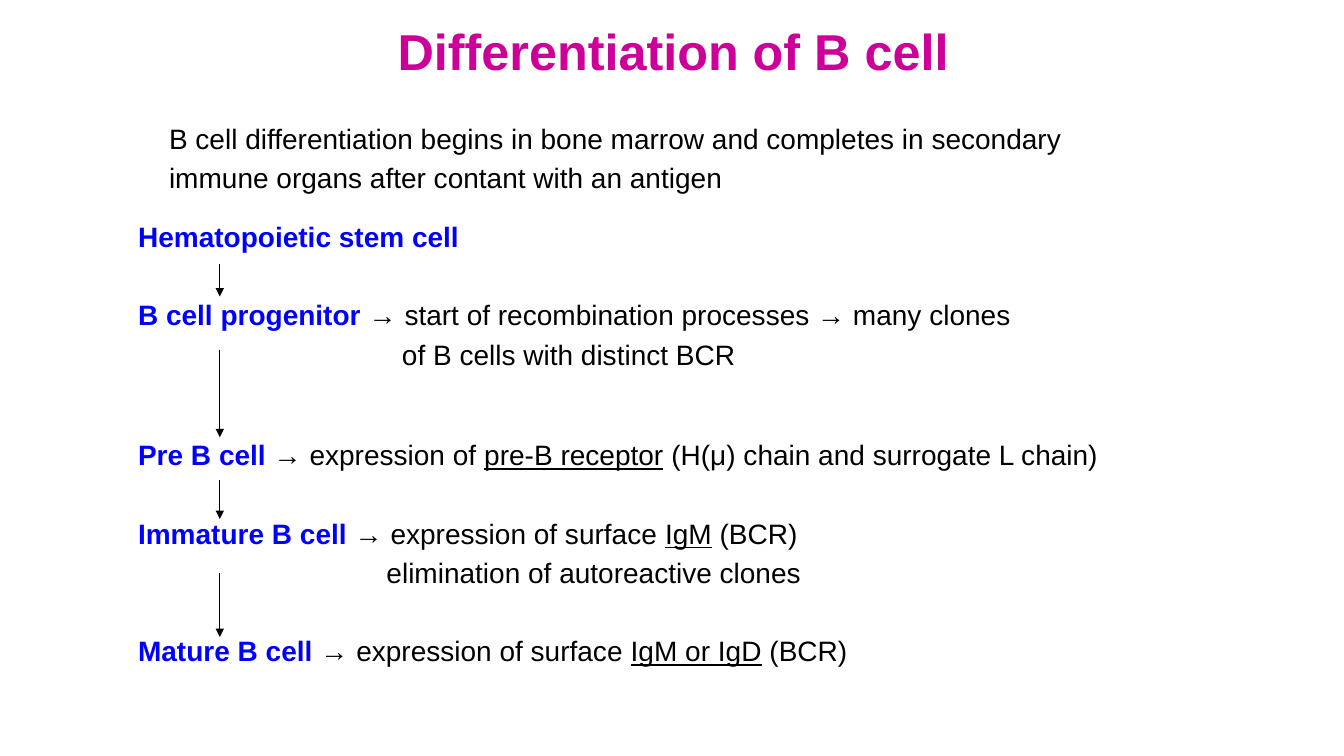
from pptx import Presentation
from pptx.dml.color import RGBColor
from pptx.enum.shapes import MSO_CONNECTOR
from pptx.enum.text import MSO_ANCHOR, MSO_AUTO_SIZE, PP_ALIGN
from pptx.oxml.ns import qn
from pptx.util import Cm, Pt
from lxml.etree import SubElement

FONT = "Arial"
BLACK, BLUE, MAGENTA = "000000", "0000FF", "CC0099"
LINE_GAP, INTRO_GAP, STAGE_GAP, LONG_GAP = 4, 18, 32, 48

# Each line: space before (pt), left indent (cm), stage name, then (text, underlined) parts
LINES = [
    (0, 0.78, "", [("B cell differentiation begins in bone marrow and completes in secondary", False)]),
    (LINE_GAP, 0.78, "", [("immune organs after contant with an antigen", False)]),
    (INTRO_GAP, 0, "Hematopoietic stem cell", []),
    (STAGE_GAP, 0, "B cell progenitor ",
     [("→ start of recombination processes → many clones", False)]),
    (LINE_GAP, 6.65, "", [("of B cells with distinct BCR", False)]),
    (LONG_GAP, 0, "Pre B cell ",
     [("→ expression of ", False), ("pre-B receptor", True),
      (" (H(μ) chain and surrogate L chain)", False)]),
    (STAGE_GAP, 0, "Immature B cell ",
     [("→ expression of surface ", False), ("IgM", True), (" (BCR)", False)]),
    (LINE_GAP, 6.26, "", [("elimination of autoreactive clones", False)]),
    (STAGE_GAP, 0, "Mature B cell ",
     [("→ expression of surface ", False), ("IgM or IgD", True), (" (BCR)", False)]),
]

# Start and end of each arrow, in cm below the top of the body
ARROW_X = 2.31
ARROW_SPANS = [(3.73, 4.55), (5.89, 8.1), (9.17, 10.16), (11.53, 13.13)]


def rgb(color):
    return RGBColor.from_string(color)


def set_font(font, size, color, bold=False):
    font.name, font.size, font.bold = FONT, Pt(size), bold
    font.color.rgb = rgb(color)


def add_title(slide, text, left, top, width, height):
    sp = slide.shapes.title
    sp.left, sp.top, sp.width, sp.height = Cm(left), Cm(top), Cm(width), Cm(height)
    tf = sp.text_frame
    tf.auto_size = MSO_AUTO_SIZE.NONE
    tf.vertical_anchor = MSO_ANCHOR.MIDDLE
    p = tf.paragraphs[0]
    p.text = text
    p.alignment = PP_ALIGN.CENTER
    set_font(p.font, 36, MAGENTA, bold=True)


def add_stages(slide, left, top, width, height):
    sp = slide.shapes.add_textbox(Cm(left), Cm(top), Cm(width), Cm(height))
    tf = sp.text_frame
    tf.word_wrap = True
    tf.margin_top = Cm(0.14)
    for i, (gap, indent, stage, parts) in enumerate(LINES):
        p = tf.add_paragraph() if i else tf.paragraphs[0]
        p._p.get_or_add_pPr().set("marL", str(Cm(indent)))
        if gap:
            p.space_before = Pt(gap)
        set_font(p.font, 20, BLACK)
        if stage:
            r = p.add_run()
            r.text = stage
            r.font.bold = True
            r.font.color.rgb = rgb(BLUE)
        for text, underlined in parts:
            r = p.add_run()
            r.text = text
            if underlined:
                r.font.underline = True


def add_arrows(slide, left, top):
    x = Cm(left + ARROW_X)
    for start, end in ARROW_SPANS:
        line = slide.shapes.add_connector(
            MSO_CONNECTOR.STRAIGHT, x, Cm(top + start), x, Cm(top + end))
        line.line.color.rgb = rgb(BLACK)
        line.line.width = Pt(0.75)
        spPr = line._element.spPr
        SubElement(spPr.find(qn("a:ln")), qn("a:tailEnd"), type="triangle")
        SubElement(spPr, qn("a:effectLst"))


def main():
    prs = Presentation()
    prs.slide_width, prs.slide_height = Cm(33.87), Cm(19.05)
    slide = prs.slides.add_slide(prs.slide_layouts[5])
    add_title(slide, "Differentiation of B cell", 5.54, 0.53, 22.86, 1.47)
    left, top = 3.23, 2.92
    add_stages(slide, left, top, 26.19, 13.82)
    add_arrows(slide, left, top)
    prs.save("out.pptx")


if __name__ == "__main__":
    main()
